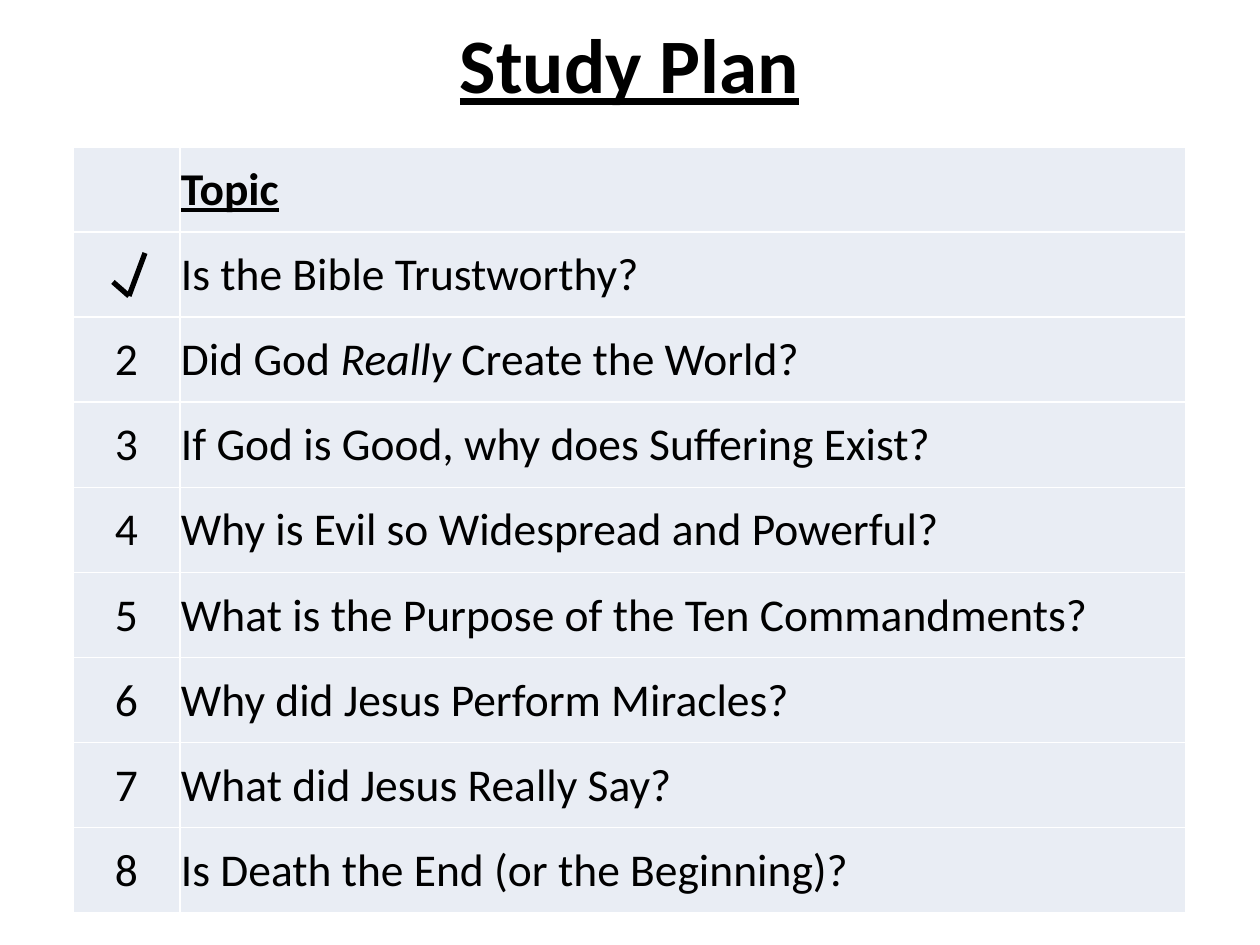
from lxml import etree
from pptx import Presentation
from pptx import util as u
from pptx.dml.color import RGBColor
from pptx.enum import shapes, text
from pptx.oxml import ns

PX_PER_INCH = 126
FONT = "Calibri"
COLORS = {"ink": "000000", "cell": "E9EDF4", "border": "FFFFFF"}
TOPICS = [
    [("Is the Bible Trustworthy?", False)],
    [("Did God ", False), ("Really ", True), ("Create the World?", False)],
    [("If God is Good, why does Suffering Exist?", False)],
    [("Why is Evil so Widespread and Powerful?", False)],
    [("What is the Purpose of the Ten Commandments?", False)],
    [("Why did Jesus Perform Miracles?", False)],
    [("What did Jesus Really Say?", False)],
    [("Is Death the End (or the Beginning)?", False)],
]


def px(n):
    return u.Emu(round(n * 914400 / PX_PER_INCH))


def rgb(name):
    return RGBColor.from_string(COLORS[name])


def add_run(p, words, size, heading=False, italic=False):
    r = p.add_run()
    r.text = words
    f = r.font
    f.name, f.size = FONT, u.Pt(size)
    f.bold = f.underline = heading
    f.italic = italic
    f.color.rgb = rgb("ink")


def add_title(slide, x, y, w, h):
    sp = slide.shapes.title
    sp.left, sp.top, sp.width, sp.height = px(x), px(y), px(w), px(h)
    tf = sp.text_frame
    tf.vertical_anchor = text.MSO_ANCHOR.MIDDLE
    p = tf.paragraphs[0]
    p.alignment = text.PP_ALIGN.CENTER
    add_run(p, "Study Plan", 44, heading=True)


def style_cell(cell):
    cell.fill.solid()
    cell.fill.fore_color.rgb = rgb("cell")
    cell.vertical_anchor = text.MSO_ANCHOR.MIDDLE
    cell.margin_left = cell.margin_right = cell.margin_top = px(1)
    cell.margin_bottom = 0
    # Borders come before the fill in the cell properties
    tc_pr = cell._tc.get_or_add_tcPr()
    for i, side in enumerate(("lnL", "lnR", "lnT", "lnB")):
        ln = etree.Element(ns.qn("a:" + side), w=str(u.Pt(1)))
        fill = etree.SubElement(ln, ns.qn("a:solidFill"))
        etree.SubElement(fill, ns.qn("a:srgbClr"), val=COLORS["border"])
        tc_pr.insert(i, ln)


def add_topics(slide, x, y, w, h, number_w):
    rows = len(TOPICS) + 1
    table = slide.shapes.add_table(rows, 2, px(x), px(y), px(w), px(h)).table
    table.first_row = table.horz_banding = False
    table.columns[0].width = px(number_w)
    table.columns[1].width = px(w - number_w)
    for row in table.rows:
        row.height = px(h / rows)
        for cell in row.cells:
            style_cell(cell)

    # Heading, then one numbered row per topic; the first is ticked off
    add_run(table.cell(0, 1).text_frame.paragraphs[0], "Topic", 26, heading=True)
    for i, runs in enumerate(TOPICS, 1):
        if i > 1:
            p = table.cell(i, 0).text_frame.paragraphs[0]
            p.alignment = text.PP_ALIGN.CENTER
            add_run(p, str(i), 26)
        p = table.cell(i, 1).text_frame.paragraphs[0]
        for words, italic in runs:
            add_run(p, words, 26, italic=italic)


def add_tick(slide, x, y, w, h):
    group = slide.shapes.add_group_shape()
    points = [(x, y + 29), (x + 16, y + h), (x + w, y)]
    for (x1, y1), (x2, y2) in zip(points, points[1:]):
        line = group.shapes.add_connector(
            shapes.MSO_CONNECTOR.STRAIGHT, px(x1), px(y1), px(x2), px(y2))
        line.line.color.rgb = rgb("ink")
        line.line.width = u.Pt(3)
        etree.SubElement(line._element.spPr, ns.qn("a:effectLst"))


def main():
    prs = Presentation()
    prs.slide_width, prs.slide_height = px(1260), px(945)
    slide = prs.slides.add_slide(prs.slide_layouts[5])
    add_title(slide, 346, 0, 567, 126)
    add_topics(slide, 73, 147, 1113, 766, number_w=107)
    add_tick(slide, 113, 253, 32, 43)
    prs.save("out.pptx")


if __name__ == "__main__":
    main()
